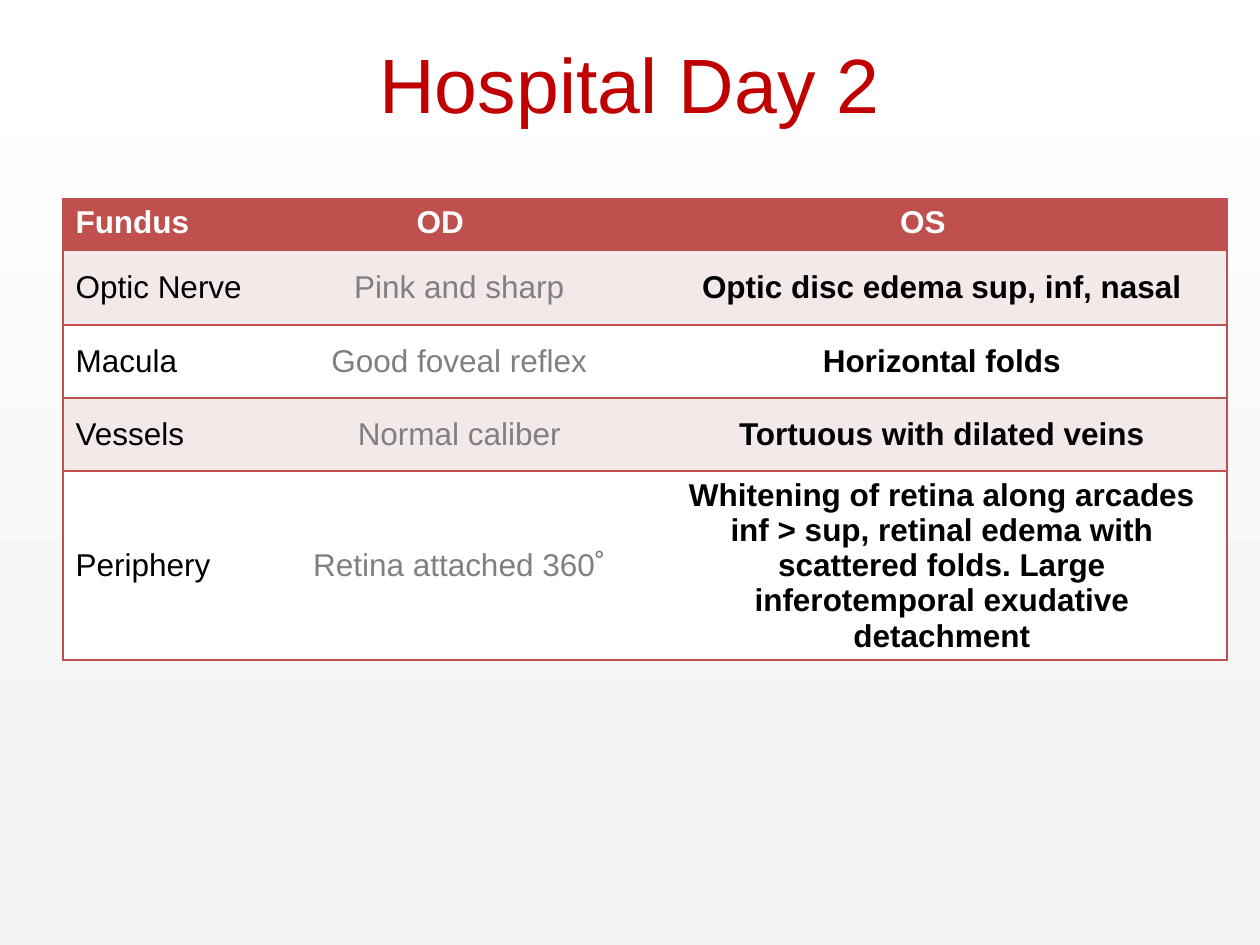
import dataclasses

import pptx
import pptx.dml.color
import pptx.enum.text
import pptx.oxml
import pptx.oxml.ns
import pptx.util

Inches, Pt = pptx.util.Inches, pptx.util.Pt
RGB = pptx.dml.color.RGBColor.from_string
ALIGN, ANCHOR = pptx.enum.text.PP_ALIGN, pptx.enum.text.MSO_ANCHOR


@dataclasses.dataclass(frozen=True)
class Theme:
    """Colours, font and type sizes of the slide."""
    font: str = "Arial"
    title_size: int = 44
    table_size: int = 18
    title: str = "C00000"
    accent: str = "C0504D"
    band: str = "F4E9E9"
    white: str = "FFFFFF"
    text: str = "000000"
    muted: str = "808080"
    backdrop: str = "F2F2F2"


THEME = Theme()
COLUMNS = (1.58, 2.83, 4.83)
ROWS = (0.41, 0.59, 0.58, 0.58, 1.5)
FINDINGS = (
    ("Fundus", "OD", "OS"),
    ("Optic Nerve", "Pink and sharp", "Optic disc edema sup, inf, nasal"),
    ("Macula", "Good foveal reflex", "Horizontal folds"),
    ("Vessels", "Normal caliber", "Tortuous with dilated veins"),
    ("Periphery", "Retina attached 360˚",
     "Whitening of retina along arcades inf > sup, retinal edema with "
     "scattered folds. Large inferotemporal exudative detachment"),
)


def style_paragraph(paragraph, size, color, bold, align):
    """Set the font and alignment of one paragraph."""
    paragraph.alignment = align
    font = paragraph.font
    font.name, font.size, font.bold = THEME.font, Pt(size), bold
    font.color.rgb = RGB(color)


def paint_background(slide):
    """Fade the slide from white at the top to light grey at the bottom."""
    fill = slide.background.fill
    fill.gradient()
    fill.gradient_angle = 90
    for stop, color in zip(fill.gradient_stops, (THEME.backdrop, THEME.white)):
        stop.color.rgb = RGB(color)


def add_title(slide, text):
    """Place and format the title placeholder."""
    title = slide.shapes.title
    title.left, title.top = Inches(0.5), Inches(0.03)
    title.width, title.height = Inches(9), Inches(1.25)
    title.text_frame.text = text
    title.text_frame.vertical_anchor = ANCHOR.MIDDLE
    style_paragraph(title.text_frame.paragraphs[0], THEME.title_size,
                    THEME.title, False, ALIGN.CENTER)


def set_borders(cell, visible_sides):
    """Draw accent lines on the given sides and none on the others."""
    properties = cell._tc.get_or_add_tcPr()
    namespace = pptx.oxml.ns.nsdecls("a")
    for position, side in enumerate("LRTB"):
        paint = "<a:noFill/>"
        if side in visible_sides:
            paint = f'<a:solidFill><a:srgbClr val="{THEME.accent}"/></a:solidFill>'
        line = pptx.oxml.parse_xml(
            f'<a:ln{side} {namespace} w="{Pt(1)}">{paint}</a:ln{side}>')
        properties.insert(position, line)


def format_cell(cell, text, row, column):
    """Fill one table cell according to its row and column."""
    header, label = row == 0, column == 0
    cell.text = text
    cell.fill.solid()
    fill = THEME.accent if header else (THEME.white, THEME.band)[row % 2]
    cell.fill.fore_color.rgb = RGB(fill)
    color = THEME.white if header else (THEME.text, THEME.muted, THEME.text)[column]
    if not header:
        cell.vertical_anchor = ANCHOR.MIDDLE
        if not label:
            cell.margin_left = Inches(0.4)
    style_paragraph(cell.text_frame.paragraphs[0], THEME.table_size, color,
                    header or column == 2, ALIGN.LEFT if label else ALIGN.CENTER)
    set_borders(cell, ("LTB", "TB", "RTB")[column])


def add_findings_table(slide):
    """Add the fundus findings for both eyes."""
    table = slide.shapes.add_table(
        len(ROWS), len(COLUMNS), Inches(0.5), Inches(1.58),
        Inches(sum(COLUMNS)), Inches(sum(ROWS))).table
    for column, width in zip(table.columns, COLUMNS):
        column.width = Inches(width)
    for row, height in zip(table.rows, ROWS):
        row.height = Inches(height)
    for row, findings in enumerate(FINDINGS):
        for column, text in enumerate(findings):
            format_cell(table.cell(row, column), text, row, column)


def main():
    """Build and save the slide."""
    deck = pptx.Presentation()
    deck.slide_width, deck.slide_height = Inches(10), Inches(7.5)
    slide = deck.slides.add_slide(deck.slide_layouts.get_by_name("Title Only"))
    paint_background(slide)
    add_title(slide, "Hospital Day 2")
    add_findings_table(slide)
    deck.save("out.pptx")


if __name__ == "__main__":
    main()
